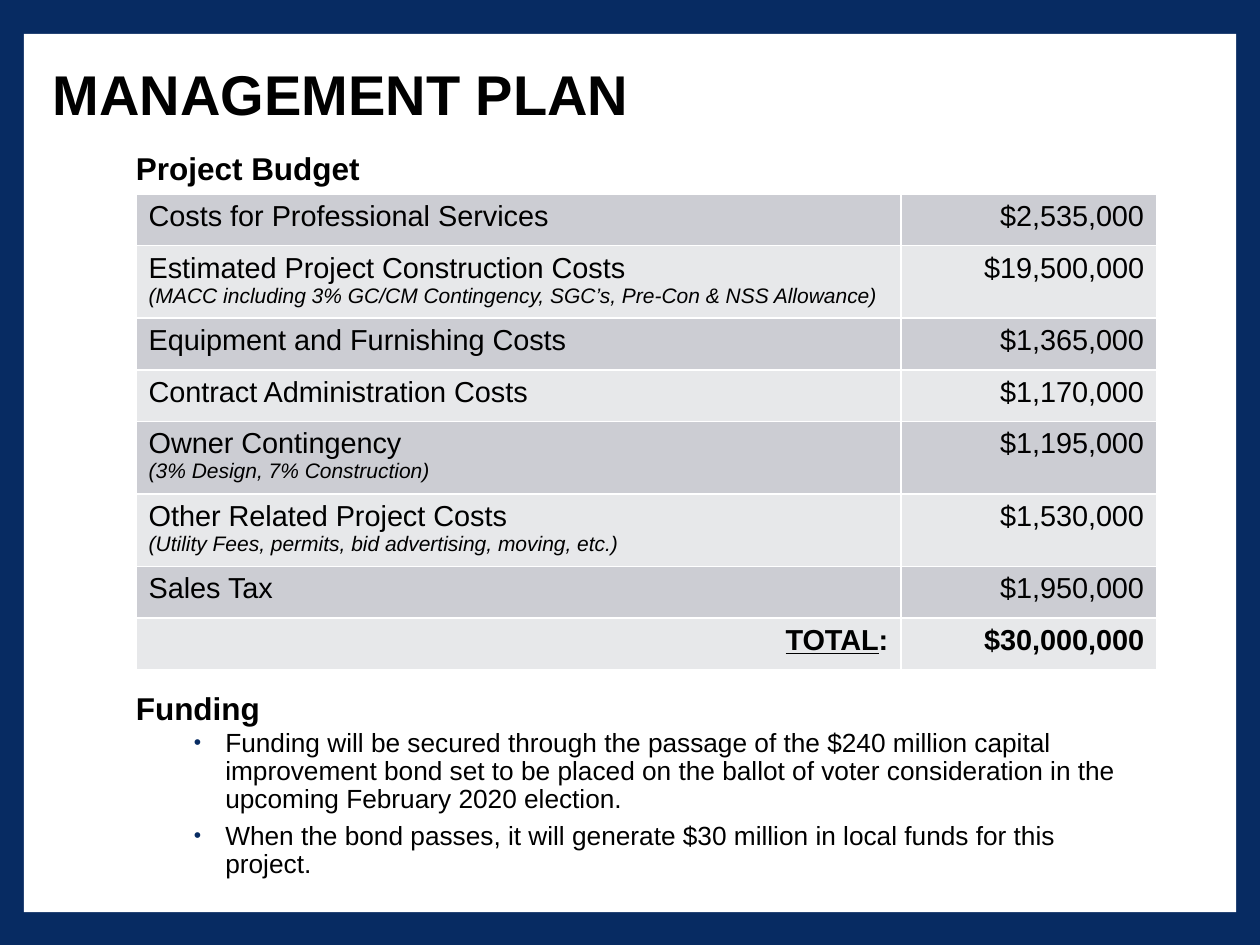
from dataclasses import dataclass

from lxml.etree import SubElement
from pptx import Presentation
from pptx.dml.color import RGBColor
from pptx.enum.shapes import MSO_SHAPE
from pptx.enum.text import MSO_ANCHOR, PP_ALIGN
from pptx.oxml.ns import qn
from pptx.util import Inches, Pt

NAVY = RGBColor(0x07, 0x2B, 0x62)
WHITE = RGBColor(0xFF, 0xFF, 0xFF)
BLACK = RGBColor(0, 0, 0)
BANDS = RGBColor(0xCC, 0xCD, 0xD3), RGBColor(0xE7, 0xE8, 0xEA)


@dataclass
class BudgetLine:
    label: str
    amount: str
    detail: str = ""


BUDGET = [
    BudgetLine("Costs for Professional Services", "$2,535,000"),
    BudgetLine("Estimated Project Construction Costs", "$19,500,000",
               "(MACC including 3% GC/CM Contingency, SGC’s, Pre-Con & NSS Allowance)"),
    BudgetLine("Equipment and Furnishing Costs", "$1,365,000"),
    BudgetLine("Contract Administration Costs", "$1,170,000"),
    BudgetLine("Owner Contingency", "$1,195,000", "(3% Design, 7% Construction)"),
    BudgetLine("Other Related Project Costs", "$1,530,000",
               "(Utility Fees, permits, bid advertising, moving, etc.)"),
    BudgetLine("Sales Tax", "$1,950,000"),
    BudgetLine("TOTAL", "$30,000,000"),
]
FUNDING = [
    "Funding will be secured through the passage of the $240 million capital improvement bond "
    "set to be placed on the ballot of voter consideration in the upcoming February 2020 election.",
    "When the bond passes, it will generate $30 million in local funds for this project.",
]


def add_run(p, text: str, *, size: float = 16.5, bold: bool = False,
            italic: bool = False, underline: bool = False) -> None:
    r = p.add_run()
    r.text = text
    r.font.name = "Arial"
    r.font.size = Pt(size)
    r.font.bold = bold
    r.font.italic = italic
    r.font.underline = underline
    r.font.color.rgb = BLACK


def add_text(tf, text: str, *, align=PP_ALIGN.LEFT, line: float = 1.0,
             before: float = 0, after: float = 0, **font):
    p = tf.paragraphs[0]
    if p.runs:
        p = tf.add_paragraph()
    p.alignment = align
    p.line_spacing = line
    p.space_before = Pt(before)
    p.space_after = Pt(after)
    add_run(p, text, **font)
    return p


def indent(p, left: float, first: float = 0) -> None:
    pPr = p._p.get_or_add_pPr()
    pPr.set("marL", str(Inches(left)))
    pPr.set("indent", str(Inches(first)))


def add_bullet(p) -> None:
    pPr = p._p.get_or_add_pPr()
    color = SubElement(pPr, qn("a:buClr"))
    SubElement(color, qn("a:srgbClr"), val=str(NAVY))
    SubElement(pPr, qn("a:buSzPct"), val="80000")
    SubElement(pPr, qn("a:buFont"), typeface="Arial")
    SubElement(pPr, qn("a:buChar"), char="•")


def add_box(s, left: float, top: float, height: float, anchor=MSO_ANCHOR.TOP):
    tf = s.shapes.add_textbox(Inches(left), Inches(top), Inches(8.1), Inches(height)).text_frame
    tf.word_wrap = True
    tf.vertical_anchor = anchor
    return tf


def add_section(s, top: float, height: float, heading: str):
    tf = add_box(s, 0.94, top, height)
    indent(add_text(tf, heading, size=18, bold=True, line=0.9, before=10.5), 0.04)
    return tf


def style_cell(cell, fill: RGBColor) -> None:
    tcPr = cell._tc.get_or_add_tcPr()
    for side in ("lnL", "lnR", "lnT", "lnB"):
        ln = SubElement(tcPr, qn(f"a:{side}"), w=str(Pt(1)))
        SubElement(SubElement(ln, qn("a:solidFill")), qn("a:srgbClr"), val=str(WHITE))
    cell.fill.solid()
    cell.fill.fore_color.rgb = fill


def add_budget_table(s, lines: list[BudgetLine]) -> None:
    heights = [0.54 if b.detail else 0.41 for b in lines]
    table = s.shapes.add_table(len(lines), 2, Inches(1.08), Inches(1.54),
                               Inches(8.1), Inches(sum(heights))).table
    table.first_row = False
    table.horz_banding = False
    for column, width in zip(table.columns, (6.07, 2.03)):
        column.width = Inches(width)
    for i, (b, height) in enumerate(zip(lines, heights)):
        table.rows[i].height = Inches(height)
        label, amount = table.cell(i, 0), table.cell(i, 1)
        for cell in (label, amount):
            style_cell(cell, BANDS[i % 2])
        total = b is lines[-1]
        p = add_text(label.text_frame, b.label, bold=total, underline=total,
                     align=PP_ALIGN.RIGHT if total else PP_ALIGN.LEFT)
        if total:
            add_run(p, ":", bold=True)
        if b.detail:
            add_text(label.text_frame, b.detail, size=12, italic=True)
        add_text(amount.text_frame, b.amount, bold=total, align=PP_ALIGN.RIGHT)


def main() -> None:
    prs = Presentation()
    prs.slide_width, prs.slide_height = Inches(10), Inches(7.5)
    s = prs.slides.add_slide(prs.slide_layouts[6])
    s.background.fill.solid()
    s.background.fill.fore_color.rgb = NAVY

    sp = s.shapes.add_shape(MSO_SHAPE.RECTANGLE, Inches(0.19), Inches(0.27),
                            Inches(9.62), Inches(6.97))
    sp.shadow.inherit = False
    sp.fill.solid()
    sp.fill.fore_color.rgb = WHITE
    sp.line.fill.background()

    title = add_box(s, 0.32, 0.38, 0.78, MSO_ANCHOR.MIDDLE)
    add_text(title, "MANAGEMENT PLAN", size=32, bold=True, line=0.9)

    add_section(s, 1.17, 5.5, "Project Budget")
    add_budget_table(s, BUDGET)

    funding = add_section(s, 5.45, 1.7, "Funding")
    for text in FUNDING:
        p = add_text(funding, text, size=15, line=0.9, before=1.5, after=3)
        p.level = 1
        indent(p, 0.75, -0.25)
        add_bullet(p)

    prs.save("out.pptx")


if __name__ == "__main__":
    main()
